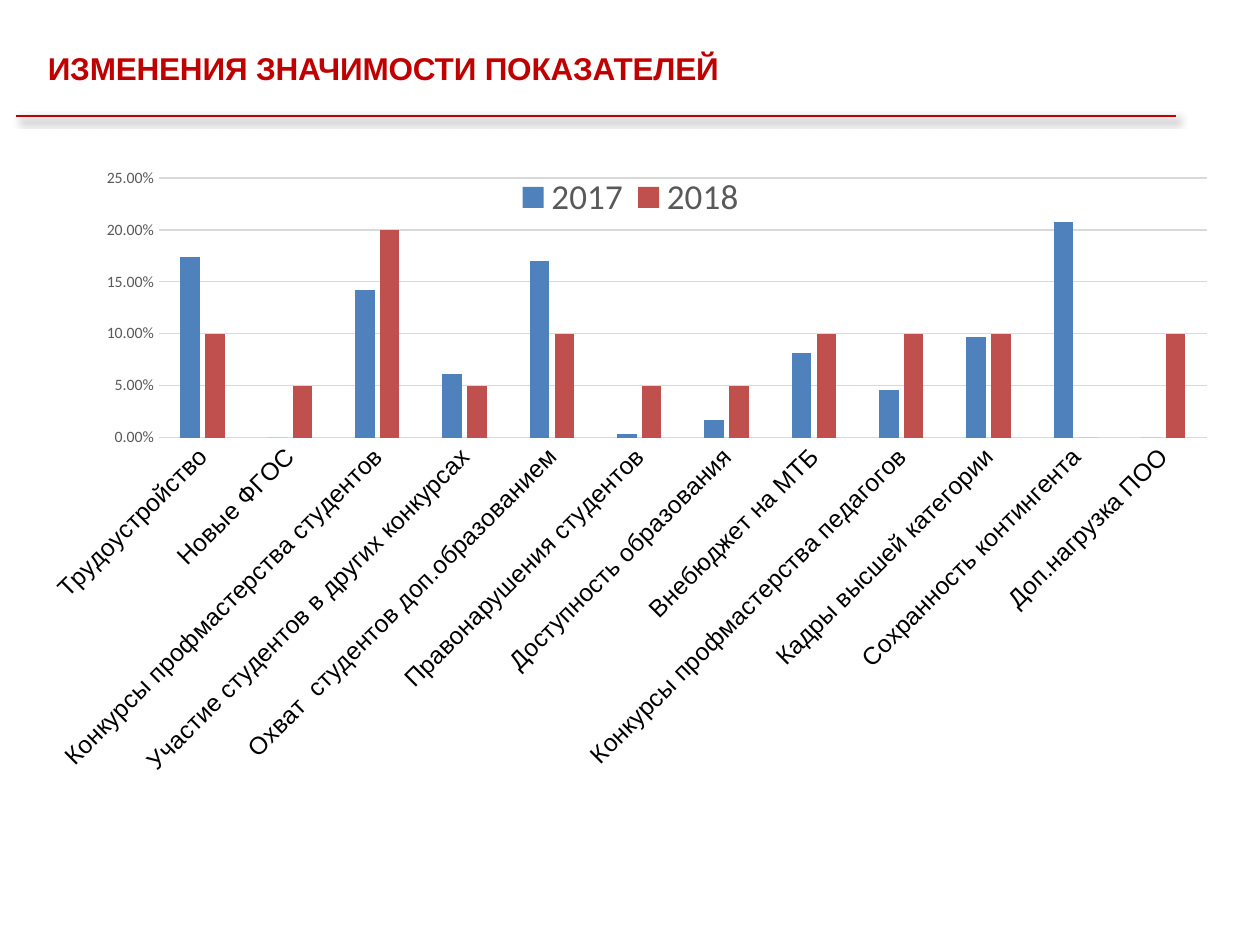
from typing import NamedTuple

from lxml.etree import SubElement
from pptx import Presentation
from pptx.chart.data import CategoryChartData
from pptx.dml.color import RGBColor
from pptx.enum.chart import XL_CHART_TYPE as ChartType
from pptx.enum.chart import XL_LEGEND_POSITION as LegendPosition
from pptx.enum.chart import XL_TICK_MARK as TickMark
from pptx.enum.shapes import MSO_CONNECTOR as Connector
from pptx.enum.text import MSO_ANCHOR as Anchor
from pptx.enum.text import PP_ALIGN as Align
from pptx.oxml import parse_xml
from pptx.oxml.ns import nsdecls, qn
from pptx.util import Cm, Pt

RED = "C00000"
GREY = "595959"
GRID = "D9D9D9"
BLACK = "000000"


class Indicator(NamedTuple):
    name: str
    share_2017: float
    share_2018: float


class Year(NamedTuple):
    name: str
    shares: list[float]
    color: str


INDICATORS = [
    Indicator("Трудоустройство", 0.174, 0.1),
    Indicator("Новые ФГОС", 0, 0.05),
    Indicator("Конкурсы профмастерства студентов", 0.142, 0.2),
    Indicator("Участие студентов в других конкурсах", 0.061, 0.05),
    Indicator("Охват  студентов доп.образованием", 0.17, 0.1),
    Indicator("Правонарушения студентов", 0.003, 0.05),
    Indicator("Доступность образования", 0.017, 0.05),
    Indicator("Внебюджет на МТБ", 0.081, 0.1),
    Indicator("Конкурсы профмастерства педагогов", 0.046, 0.1),
    Indicator("Кадры высшей категории", 0.097, 0.1),
    Indicator("Сохранность контингента", 0.208, 0),
    Indicator("Доп.нагрузка ПОО", 0, 0.1),
]

YEARS = [
    Year("2017", [item.share_2017 for item in INDICATORS], "4F81BD"),
    Year("2018", [item.share_2018 for item in INDICATORS], "C0504D"),
]


def rgb(color: str) -> RGBColor:
    return RGBColor.from_string(color)


def format_font(font, size: float, color: str, face: str, bold: bool = False) -> None:
    font.size = Pt(size)
    font.name = face
    font.bold = bold
    font.color.rgb = rgb(color)


def write_text(frame, text: str, *, size: float, color: str, face: str = "Arial",
               bold: bool = False, spacing: int = 0) -> None:
    frame.word_wrap = True
    frame.vertical_anchor = Anchor.MIDDLE
    paragraph = frame.paragraphs[0]
    paragraph.alignment = Align.LEFT
    run = paragraph.add_run()
    run.text = text
    format_font(run.font, size, color, face, bold)
    run.font._element.set("spc", str(spacing))


def draw_title(slide, text: str) -> None:
    title = slide.shapes.title
    title.left, title.top, title.width, title.height = Cm(0.71), Cm(0.86), Cm(22.81), Cm(1.02)
    write_text(title.text_frame, text, size=18, color=RED, bold=True, spacing=-10)


def draw_title_rule(slide) -> None:
    rule = slide.shapes.add_connector(Connector.STRAIGHT, Cm(0.33), Cm(2.34), Cm(23.7), Cm(2.34))
    rule.line.color.rgb = rgb(RED)
    rule.line.width = Pt(1.5)
    rule._element.spPr.append(parse_xml(
        f'<a:effectLst {nsdecls("a")}>'
        f'<a:outerShdw blurRad="{Pt(4)}" dist="{Pt(3)}" dir="2700000" algn="tl" rotWithShape="0">'
        f'<a:srgbClr val="{BLACK}"><a:alpha val="40000"/></a:srgbClr>'
        '</a:outerShdw></a:effectLst>'))


def place(layout, x: float, y: float, w: float, h: float, inner: bool = False) -> None:
    manual = SubElement(layout, qn("c:manualLayout"))
    settings = {"layoutTarget": "inner"} if inner else {}
    settings |= {"xMode": "edge", "yMode": "edge", "x": x, "y": y, "w": w, "h": h}
    for tag, value in settings.items():
        SubElement(manual, qn(f"c:{tag}")).set("val", str(value))


def format_line(line) -> None:
    line.color.rgb = rgb(GRID)
    line.width = Pt(0.75)


def format_axes(chart) -> None:
    indicators, shares = chart.category_axis, chart.value_axis
    for axis in (indicators, shares):
        axis.major_tick_mark = axis.minor_tick_mark = TickMark.NONE
    format_font(indicators.tick_labels.font, 14, BLACK, "Arial")
    indicators._element.txPr.find(qn("a:bodyPr")).set("rot", "-2700000")
    indicators.has_major_gridlines = False
    format_line(indicators.format.line)

    format_font(shares.tick_labels.font, 9, GREY, "Calibri")
    shares.tick_labels.number_format = "0.00%"
    shares.tick_labels.number_format_is_linked = False
    shares.minimum_scale, shares.maximum_scale, shares.major_unit = 0, 0.25, 0.05
    shares.format.line.fill.background()
    format_line(shares.major_gridlines.format.line)


def format_legend(chart) -> None:
    chart.has_legend = True
    legend = chart.legend
    legend.position = LegendPosition.TOP
    legend.include_in_layout = False
    format_font(legend.font, 20, GREY, "Calibri")
    layout = legend._element.find(qn("c:layout"))
    if layout is None:
        layout = parse_xml(f'<c:layout {nsdecls("c")}/>')
        legend._element.find(qn("c:legendPos")).addnext(layout)
    place(layout, 0.4, 0.02, 0.2, 0.07)


def draw_chart(slide, years: list[Year]) -> None:
    data = CategoryChartData(number_format="0.00%")
    data.categories = [item.name for item in INDICATORS]
    for year in years:
        data.add_series(year.name, year.shares)
    chart = slide.shapes.add_chart(
        ChartType.COLUMN_CLUSTERED, Cm(0.33), Cm(3.12), Cm(24.77), Cm(15.62), data).chart
    chart.has_title = False
    format_font(chart.font, 10, BLACK, "Calibri")

    plot = chart.plots[0]
    plot.gap_width = 219
    plot.overlap = -27
    plot.vary_by_categories = False
    for series, year in zip(plot.series, years):
        series.format.fill.solid()
        series.format.fill.fore_color.rgb = rgb(year.color)

    area = chart._chartSpace.chart.plotArea
    layout = area.find(qn("c:layout"))
    if layout is None:
        layout = parse_xml(f'<c:layout {nsdecls("c")}/>')
        area.insert(0, layout)
    place(layout, 0.116, 0.03, 0.853, 0.335, inner=True)
    format_axes(chart)
    format_legend(chart)


def main() -> None:
    deck = Presentation()
    deck.slide_width, deck.slide_height = Cm(25.4), Cm(19.05)
    slide = deck.slides.add_slide(deck.slide_layouts[5])
    draw_title(slide, "ИЗМЕНЕНИЯ ЗНАЧИМОСТИ ПОКАЗАТЕЛЕЙ")
    draw_title_rule(slide)
    draw_chart(slide, YEARS)
    deck.save("out.pptx")


if __name__ == "__main__":
    main()
